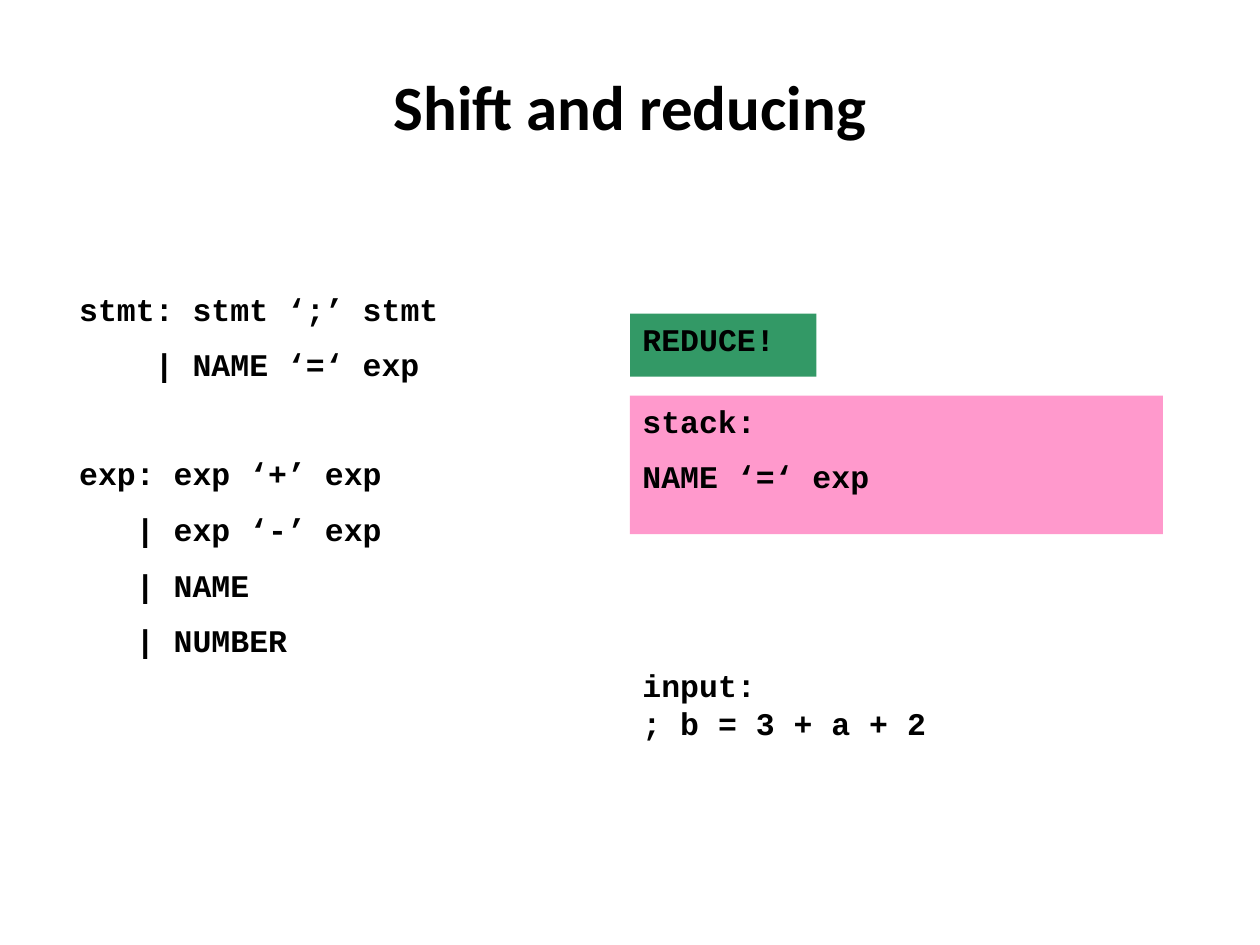
from pptx import Presentation
from pptx.dml.color import RGBColor
from pptx.enum.shapes import MSO_SHAPE as Shape
from pptx.enum.text import MSO_ANCHOR as Anchor, PP_ALIGN as Align
from pptx.util import Inches, Pt

GAP = 10.2
BLANK_LINE = 30.6
CHARACTER = 0.15


def color(value):
    return RGBColor.from_string(value)


def assign(target, values):
    for name, value in values.items():
        setattr(target, name, value)


class SlideBuilder:
    title_font = {"name": "Calibri", "size": Pt(36), "bold": True}
    code_font = {"name": "Courier New", "size": Pt(18), "bold": True}
    ink = "000000"

    def __init__(self, deck):
        self.page = deck.slides.add_slide(deck.slide_layouts[5])

    def place(self, box, area):
        names = ("left", "top", "width", "height")
        assign(box, dict(zip(names, map(Inches, area))))

    def add_span(self, para, text, font):
        span = para.add_run()
        span.text = text
        assign(span.font, font)
        span.font.color.rgb = color(self.ink)

    def title(self, text, area):
        box = self.page.shapes.title
        self.place(box, area)
        box.text_frame.vertical_anchor = Anchor.MIDDLE
        para = box.text_frame.paragraphs[0]
        para.alignment = Align.CENTER
        self.add_span(para, text, self.title_font)

    def fill_lines(self, box, lines, wrap):
        frame = box.text_frame
        assign(frame, {"word_wrap": wrap, "vertical_anchor": Anchor.TOP})
        for index, (text, before, indent) in enumerate(lines):
            para = frame.add_paragraph() if index else frame.paragraphs[0]
            assign(para, {"alignment": Align.LEFT, "space_before": Pt(before)})
            if indent:
                properties = para._p.get_or_add_pPr()
                properties.set("marL", str(Inches(indent * CHARACTER)))
                properties.set("indent", "0")
            self.add_span(para, text, self.code_font)

    def text(self, lines, area, wrap=True):
        box = self.page.shapes.add_textbox(*map(Inches, area))
        self.fill_lines(box, lines, wrap)

    def panel(self, lines, area, fill, wrap=True):
        box = self.page.shapes.add_shape(Shape.RECTANGLE, *map(Inches, area))
        box.shadow.inherit = False
        box.fill.solid()
        box.fill.fore_color.rgb = color(fill)
        box.line.fill.background()
        self.fill_lines(box, lines, wrap)


def main():
    deck = Presentation()
    assign(deck, {"slide_width": Inches(10), "slide_height": Inches(7.5)})
    builder = SlideBuilder(deck)
    builder.title("Shift and reducing", (0.5, 0.3, 9, 1.07))

    grammar = [
        ("stmt: stmt ‘;’ stmt", 0, 0),
        ("| NAME ‘=‘ exp", GAP, 4),
        ("exp: exp ‘+’ exp", GAP + BLANK_LINE, 0),
        ("| exp ‘-’ exp", GAP, 3),
        ("| NAME", GAP, 3),
        ("| NUMBER", GAP, 3),
    ]
    builder.text(grammar, (0.53, 2.25, 4.02, 4.09))

    remaining_input = [("input:", 0, 0), ("; b = 3 + a + 2", 0, 0)]
    builder.text(remaining_input, (5, 5.24, 2.95, 0.9), wrap=False)

    stack = [("stack:", 0, 0), ("NAME ‘=‘ exp", GAP, 0)]
    builder.panel(stack, (5, 3.14, 4.23, 1.1), "FF99CC")
    builder.panel([("REDUCE!", 0, 0)], (5, 2.49, 1.48, 0.5), "339966", wrap=False)

    deck.save("out.pptx")


if __name__ == "__main__":
    main()
